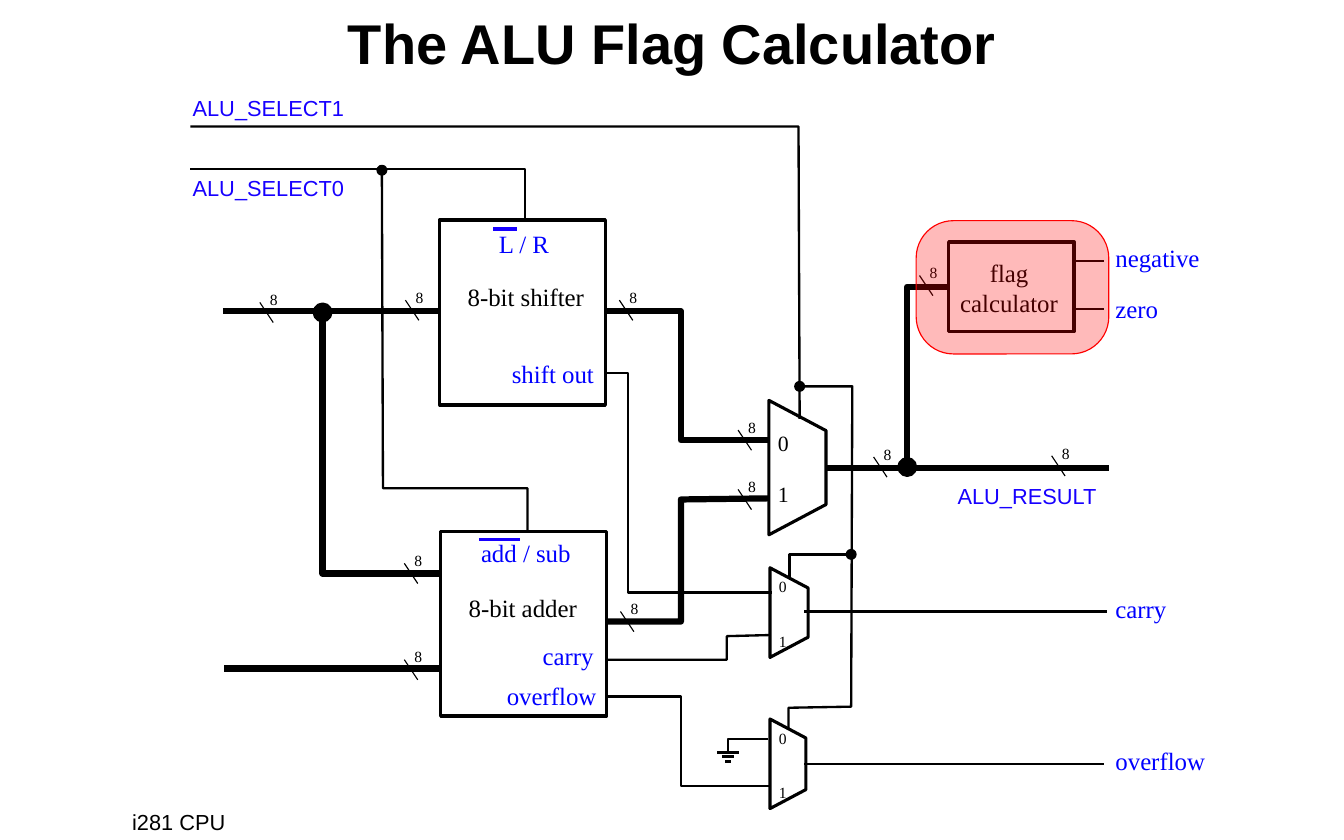
from lxml.etree import SubElement
from pptx import Presentation
from pptx.dml.color import RGBColor
from pptx.enum.shapes import MSO_CONNECTOR, MSO_SHAPE
from pptx.enum.text import MSO_ANCHOR, PP_ALIGN
from pptx.oxml.ns import qn
from pptx.util import Inches, Pt

COLS, ROWS = 1200, 750
CELL = Inches(12) // COLS
BLACK, BLUE, NAVY, RED, WHITE = "000000", "0000FF", "1700FF", "FF0000", "FFFFFF"
SERIF = {"name": "Times New Roman", "size": Pt(16), "bold": False}
SMALL = {**SERIF, "size": Pt(10)}
LARGE = {**SERIF, "size": Pt(14)}
SANS = {"name": "Arial", "size": Pt(14), "bold": False}
HEAD = {"name": "Arial", "size": Pt(36), "bold": True}
PLAIN = dict.fromkeys(("margin_left", "margin_right", "margin_top", "margin_bottom"), 0)
PLAIN["word_wrap"] = True
BUS, WIRE, EDGE, TICK = 4, 1.5, 2, 0.75

deck = Presentation()
deck.slide_width, deck.slide_height = COLS * CELL, ROWS * CELL
parts = deck.slides.add_slide(deck.slide_layouts[6]).shapes


def cells(*counts):
    """Turn grid counts into lengths."""
    return [round(count * CELL) for count in counts]


def ink(code):
    """Turn a hex string into a colour."""
    return RGBColor.from_string(code)


def apply(target, style):
    """Set each format value on the target."""
    for key, value in style.items():
        setattr(target, key, value)


def text(box, lines, style, tint=BLACK, gap=0, **frame):
    """Write lines of text in a box without margins."""
    body = parts.add_textbox(*cells(*box)).text_frame
    align = frame.pop("align", PP_ALIGN.LEFT)
    apply(body, {**PLAIN, **frame})
    for row, line in enumerate(lines):
        para = body.add_paragraph() if row else body.paragraphs[0]
        apply(para, {"alignment": align, "space_before": Pt(gap if row else 0)})
        run = para.add_run()
        run.text = line
        apply(run.font, style)
        run.font.color.rgb = ink(tint)


def stroke(part, weight, tint=BLACK):
    """Colour and size an outline."""
    part.line.color.rgb = ink(tint)
    part.line.width = Pt(weight)


def shape(kind, box, weight, fill=None, tint=BLACK):
    """Draw a preset shape."""
    part = parts.add_shape(kind, *cells(*box))
    part.shadow.inherit = False
    if fill:
        part.fill.solid()
        part.fill.fore_color.rgb = ink(fill)
    else:
        part.fill.background()
    stroke(part, weight, tint)
    return part


def line(start, end, weight=WIRE, tint=BLACK):
    """Draw one straight line."""
    part = parts.add_connector(MSO_CONNECTOR.STRAIGHT, *cells(*start, *end))
    stroke(part, weight, tint)
    SubElement(part._element.spPr, qn("a:effectLst"))


def wire(points, weight=WIRE):
    """Draw a line, or a bent path through several points."""
    if len(points) == 2:
        return line(*points, weight)
    path = parts.build_freeform(*points[0], scale=CELL)
    path.add_line_segments(points[1:], close=False)
    part = path.convert_to_shape()
    part.shadow.inherit = False
    part.fill.background()
    stroke(part, weight)


def tap(x, y):
    """Mark a bus as eight bits wide."""
    line((x, y), (x + 12, y + 18), TICK)
    text((x + 9, y - 11, 15, 17), ["8"], SMALL)


def dot(x, y, size):
    """Draw a junction around a point."""
    shape(MSO_SHAPE.OVAL, (x - size / 2, y - size / 2, size, size), EDGE, BLACK)


def mux(box, style, top, gap):
    """Draw a selector with its two input names."""
    x, y, w, h = box
    body = shape(MSO_SHAPE.TRAPEZOID,
                 (x + (w - h) / 2, y + (h - w) / 2, h, w), EDGE, WHITE)
    body.rotation = 90
    body.adjustments[0] = 0.53
    text((x + 8, y + top, w / 2, h - top), ["0", "1"], style, gap=gap)


def unit(box, name, bar, tags):
    """Draw an arithmetic unit with its ports."""
    x, y, w, h = box
    shape(MSO_SHAPE.RECTANGLE, box, 2.25)
    text((x + 25, y + 55, w - 26, 27), [name], SERIF)
    for left, top, tag in tags:
        text((x + left, y + top, w - left, 27), [tag], SERIF, BLUE)
    left, top, width = bar
    line((x + left, y + top), (x + left + width, y + top), EDGE, NAVY)


def flags(box):
    """Draw the flag calculator and its two outputs."""
    x, y, w, h = box
    shape(MSO_SHAPE.RECTANGLE, box, 2.25)
    text((x + 3, y + 14, w - 10, 54), ["flag", "calculator"], SERIF, align=PP_ALIGN.CENTER)
    for top, drop, name in ((17, 1, "negative"), (60, 46, "zero")):
        line((x + w, y + top), (x + w + 27, y + top))
        text((x + w + 37, y + drop, 100, 27), [name], SERIF, BLUE)


def glow(box):
    """Lay a clear red panel over a region."""
    panel = shape(MSO_SHAPE.ROUNDED_RECTANGLE, box, TICK, RED, RED)
    panel.adjustments[0] = 0.28
    tone = panel._element.spPr.find(qn("a:solidFill"))[0]
    SubElement(tone, qn("a:alpha"), val="27000")


def ground(box):
    """Draw a ground sign and its lead."""
    x, y, w, h = box
    wire([(x + w, y), (x + 10, y), (x + 10, y + h)])
    for half, drop in ((9.5, 0), (5.5, 3.5), (2.5, 8)):
        line((x + 10 - half, y + h + drop), (x + 10 + half, y + h + drop))


def nets():
    """Route the buses and the single wires."""
    thick = (
        [(543, 555), (608, 555), (608, 446), (687, 445)],
        [(542, 278), (608, 278), (608, 393), (686, 393)],
        [(288, 278), (288, 512), (393, 512)],
        [(810, 416), (810, 256), (847, 256)],
        [(200, 597), (393, 597)], [(199, 277.5), (393, 277.5)],
        [(738, 418), (990, 418)])
    thin = (
        [(471, 474), (471, 436), (342, 436), (341, 151)],
        [(469, 196), (469, 151), (170, 151)],
        [(714, 374), (713, 113), (170, 113)],
        [(705, 516), (705, 495), (760, 495)],
        [(542, 622), (608, 622), (608, 702), (687, 702)],
        [(541, 333), (561, 333), (561, 529), (689, 529)],
        [(543, 589), (649, 589), (649, 568), (687, 567)],
        [(704, 651), (704, 632), (760, 631), (761, 345), (713, 345)],
        [(718, 546), (988, 546)], [(718, 682), (986, 682)])
    for group, weight in ((thick, BUS), (thin, WIRE)):
        for points in group:
            wire(points, weight)


def marks():
    """Place the bus widths and the junctions."""
    for spot in ((232, 270), (362, 268), (553, 268), (361, 503), (361, 589), (554, 546),
                 (821, 246), (780, 408), (939, 407), (659, 384), (659, 437)):
        tap(*spot)
    for x, y, size in ((760, 495, 7), (714, 345, 7), (341, 152, 7),
                       (810, 417, 15), (288, 279, 15)):
        dot(x, y, size)


def names():
    """Write the title and the signal names."""
    text((100, 0, 1000, 75), ["The ALU Flag Calculator"], HEAD,
         align=PP_ALIGN.CENTER, vertical_anchor=MSO_ANCHOR.MIDDLE)
    for x, y, name, tint in ((172, 85, "ALU_SELECT1", NAVY), (172, 156, "ALU_SELECT0", NAVY),
                             (855, 431, "ALU_RESULT", NAVY), (118, 722, "i281 CPU", BLACK)):
        text((x, y, 150, 24), [name], SANS, tint)
    for y, name in ((530, "carry"), (666, "overflow")):
        text((996, y, 100, 27), [name], SERIF, BLUE)


def main():
    """Build the slide and save it."""
    names()
    mux((686.5, 357.5, 51, 120), LARGE, 26.5, 16)
    for top, width in ((507, 34), (642, 32)):
        mux((687.5, top, width, 80), SMALL, 8.5, 23)
    flags((847, 216, 112, 80))
    unit((393.5, 474.5, 148, 165), "8-bit adder", (34, 7, 37),
         ((36, 5.5, "add / sub"), (91, 97.5, "carry"), (59, 133.5, "overflow")))
    unit((392.5, 196.5, 148, 165), "8-bit shifter", (48, 8, 21),
         ((53, 7.5, "L / R"), (64.5, 123.5, "shift out")))
    nets()
    ground((640, 660, 46, 12))
    marks()
    glow((818, 197, 172, 119))
    deck.save("out.pptx")


if __name__ == "__main__":
    main()
